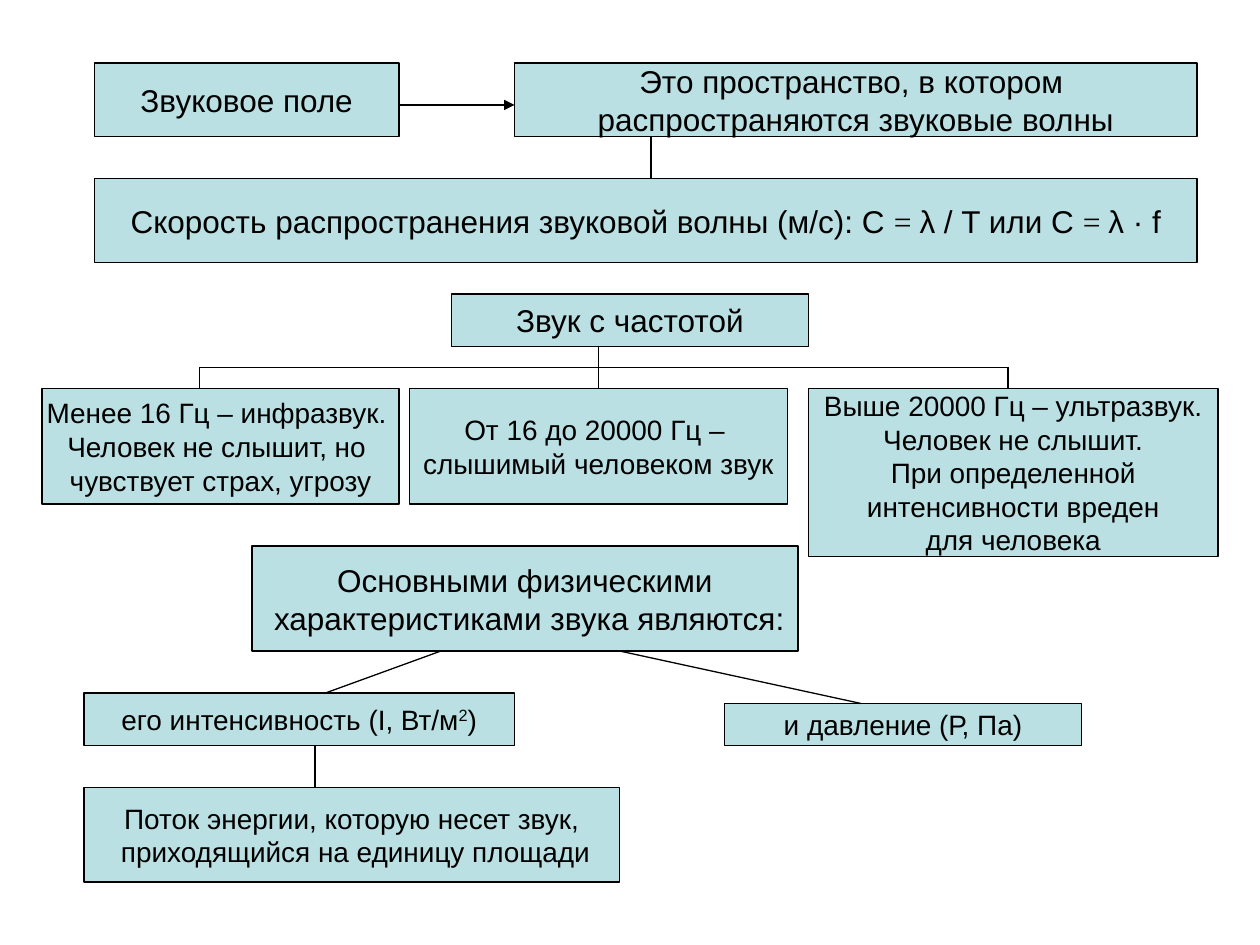
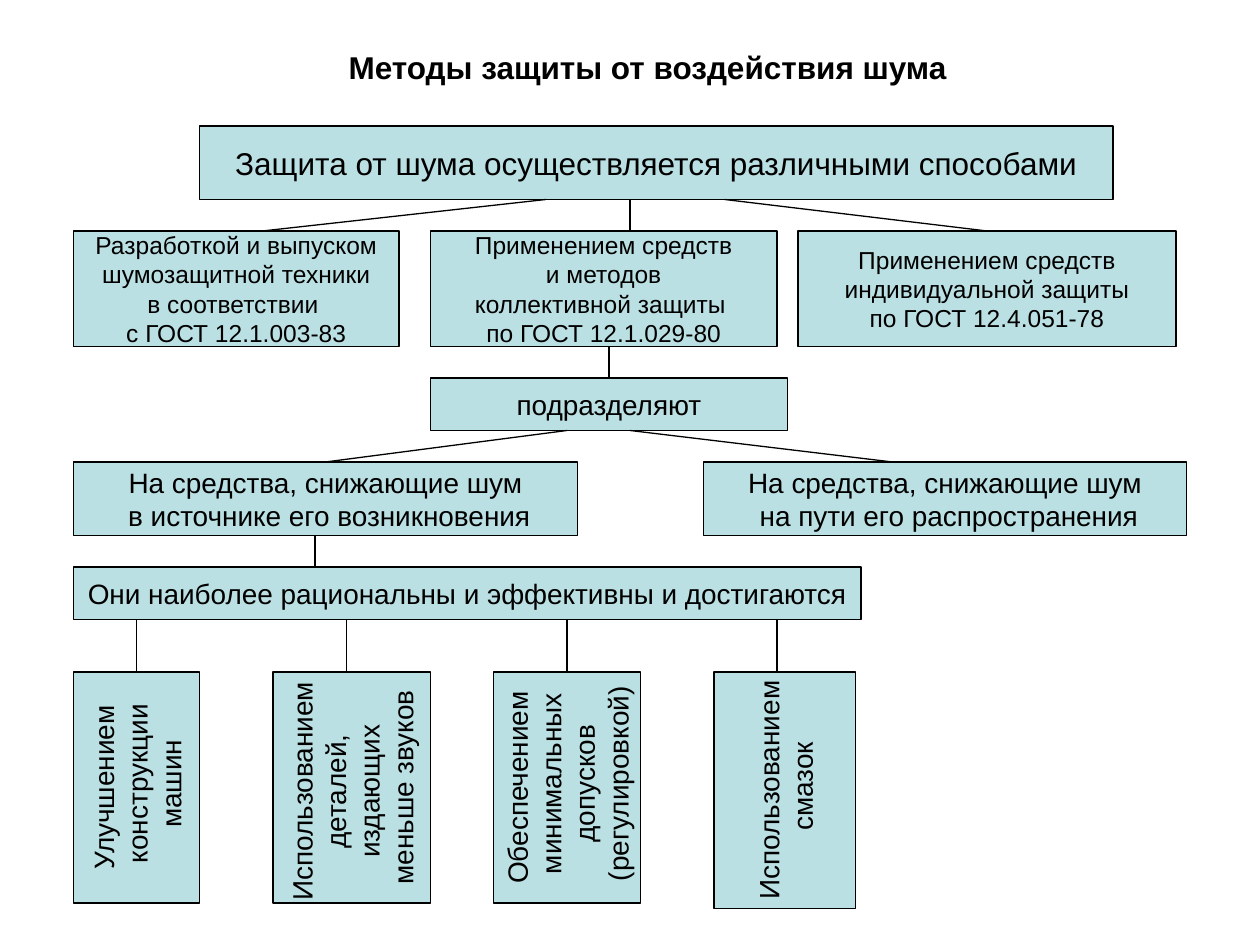
from dataclasses import dataclass

from lxml import etree
from pptx import Presentation
from pptx import util as u
from pptx.dml.color import RGBColor
from pptx.enum import shapes, text
from pptx.oxml import ns


@dataclass(frozen=True)
class Theme:
    ink: RGBColor = RGBColor(0, 0, 0)
    fill: RGBColor = RGBColor(0xBB, 0xE0, 0xE3)
    sans: str = "Arial"
    serif: str = "Times New Roman"
    large: int = 18
    mid: int = 16
    small: int = 14
    rule: float = 0.75


LOOK = Theme()
SERIF = {"name": LOOK.serif}
RAISED = {"baseline": "30000"}


def assign(item, values):
    for key, value in values.items():
        setattr(item, key, value)


def place(shape, box):
    assign(shape, dict(zip(("left", "top", "width", "height"), map(u.Pt, box))))


def stroke(line):
    line.color.rgb = LOOK.ink
    line.width = u.Pt(LOOK.rule)


def add_run(para, words, size, style):
    run = para.add_run()
    run.text = words
    look = {"name": LOOK.sans, "size": u.Pt(size), **style}
    base = look.pop("baseline", None)
    assign(run.font, look)
    run.font.color.rgb = LOOK.ink
    if base:
        run.font._element.set("baseline", base)


def write(frame, lines, size, align, **style):
    for i, line in enumerate(lines):
        para = frame.paragraphs[0] if i == 0 else frame.add_paragraph()
        para.alignment = align
        spans = [(line, {})] if isinstance(line, str) else line
        for words, extra in spans:
            add_run(para, words, size, {**style, **extra})


def add_title(slide, box, words):
    title = slide.shapes.title
    place(title, box)
    assign(title.text_frame, {
        "word_wrap": False,
        "vertical_anchor": text.MSO_ANCHOR.TOP,
        "auto_size": text.MSO_AUTO_SIZE.SHAPE_TO_FIT_TEXT,
    })
    write(title.text_frame, [words], LOOK.large, text.PP_ALIGN.LEFT, bold=True)


def add_card(slide, box, size, *lines):
    card = slide.shapes.add_shape(
        shapes.MSO_SHAPE.RECTANGLE, *map(u.Pt, box))
    card.shadow.inherit = False
    card.fill.solid()
    card.fill.fore_color.rgb = LOOK.fill
    stroke(card.line)
    assign(card.text_frame, {
        "word_wrap": False, "vertical_anchor": text.MSO_ANCHOR.MIDDLE})
    write(card.text_frame, lines, size, text.PP_ALIGN.CENTER)
    return card


def add_upright(slide, box, size, *lines):
    left, top, wide, high = box
    shift = (wide - high) / 2
    card = add_card(slide, (left + shift, top - shift, high, wide), size, *lines)
    card.rotation = 270


def add_line(slide, ends, arrow=False):
    link = slide.shapes.add_connector(
        shapes.MSO_CONNECTOR.STRAIGHT, *map(u.Pt, ends))
    stroke(link.line)
    props = link._element.spPr
    if arrow:
        etree.SubElement(
            props.find(ns.qn("a:ln")), ns.qn("a:tailEnd"), type="triangle")
    etree.SubElement(props, ns.qn("a:effectLst"))


def draw_sound(slide):
    large = [
        ((54, 36, 174, 42), "Звуковое поле"),
        ((294, 36, 390, 42), "Это пространство, в котором ",
         "распространяются звуковые волны"),
        ((54, 102, 630, 48), [
            ("Скорость распространения звуковой волны (м/с): C ", {}),
            ("= ", SERIF), ("λ / T или C ", {}), ("= ", SERIF), ("λ · f", {})]),
        ((258, 168, 204, 30), "Звук с частотой"),
        ((144, 312, 312, 60), "Основными физическими",
         " характеристиками звука являются:"),
    ]
    mid = [
        ((462, 222, 234, 96), "Выше 20000 Гц – ультразвук.",
         " Человек не слышит. ", "При определенной",
         " интенсивности вреден ", "для человека"),
        ((234, 222, 216, 66), "От 16 до 20000 Гц – ",
         "слышимый человеком звук"),
        ((24, 222, 204, 66), "Менее 16 Гц – инфразвук. ",
         "Человек не слышит, но ", "чувствует страх, угрозу"),
        ((414, 402, 204, 24), "и давление (Р, Па)"),
        ((48, 396, 246, 30), [
            ("его интенсивность (I, Вт/м", {}), ("2", RAISED), (")", {})]),
        ((48, 450, 306, 54), "Поток энергии, которую несет звук,",
         " приходящийся на единицу площади"),
    ]
    for size, cards in ((LOOK.large, large), (LOOK.mid, mid)):
        for box, *lines in cards:
            add_card(slide, box, size, *lines)
    add_line(slide, (228, 60, 294, 60), arrow=True)
    for ends in (
        (372, 78, 372, 102),
        (114, 210, 576, 210),
        (342, 198, 342, 222),
        (114, 210, 114, 222),
        (576, 210, 576, 222),
        (252, 372, 186, 396),
        (354, 372, 492, 402),
        (180, 426, 180, 450),
    ):
        add_line(slide, ends)


def draw_guard(slide):
    add_title(slide, (192, 24, 359, 29), "Методы защиты от воздействия шума")
    add_card(slide, (114, 72, 522, 42), LOOK.large,
             "Защита от шума осуществляется различными способами")
    ways = [
        (456, 216, "Применением средств", " индивидуальной защиты ",
         "по ГОСТ 12.4.051-78"),
        (246, 198, "Применением средств", " и методов ",
         "коллективной защиты ", "по ГОСТ 12.1.029-80"),
        (42, 186, "Разработкой и выпуском", " шумозащитной техники ",
         "в соответствии ", "с ГОСТ 12.1.003-83"),
    ]
    for left, wide, *lines in ways:
        add_card(slide, (left, 132, wide, 66), LOOK.small, *lines)
    for box, *lines in (
        ((246, 216, 204, 30), "подразделяют"),
        ((402, 264, 276, 42), "На средства, снижающие шум",
         " на пути его распространения"),
        ((42, 264, 288, 42), "На средства, снижающие шум",
         " в источнике его возникновения"),
        ((42, 324, 450, 30),
         "Они наиболее рациональны и эффективны и достигаются"),
    ):
        add_card(slide, box, LOOK.mid, *lines)
    means = [
        (78, 42, 72, 132, "Улучшением", " конструкции", " машин"),
        (198, 156, 90, 132, "Использованием ", "деталей, ", "издающих ",
         "меньше звуков"),
        (324, 282, 84, 132, "Обеспечением", " минимальных", " допусков",
         " (регулировкой)"),
        (444, 408, 81, 135, "Использованием", " смазок"),
    ]
    for stem, left, wide, high, *lines in means:
        add_upright(slide, (left, 384, wide, high), LOOK.mid, *lines)
        add_line(slide, (stem, 354, stem, 384))
    for ends in (
        (312, 114, 150, 132),
        (360, 114, 360, 132),
        (414, 114, 564, 132),
        (348, 198, 348, 216),
        (324, 246, 186, 264),
        (360, 246, 510, 264),
        (180, 306, 180, 324),
    ):
        add_line(slide, ends)


def main():
    deck = Presentation()
    assign(deck, {"slide_width": u.Pt(720), "slide_height": u.Pt(540)})
    for name, draw in (("Blank", draw_sound), ("Title Only", draw_guard)):
        draw(deck.slides.add_slide(deck.slide_layouts.get_by_name(name)))
    deck.save("out.pptx")


if __name__ == "__main__":
    main()
